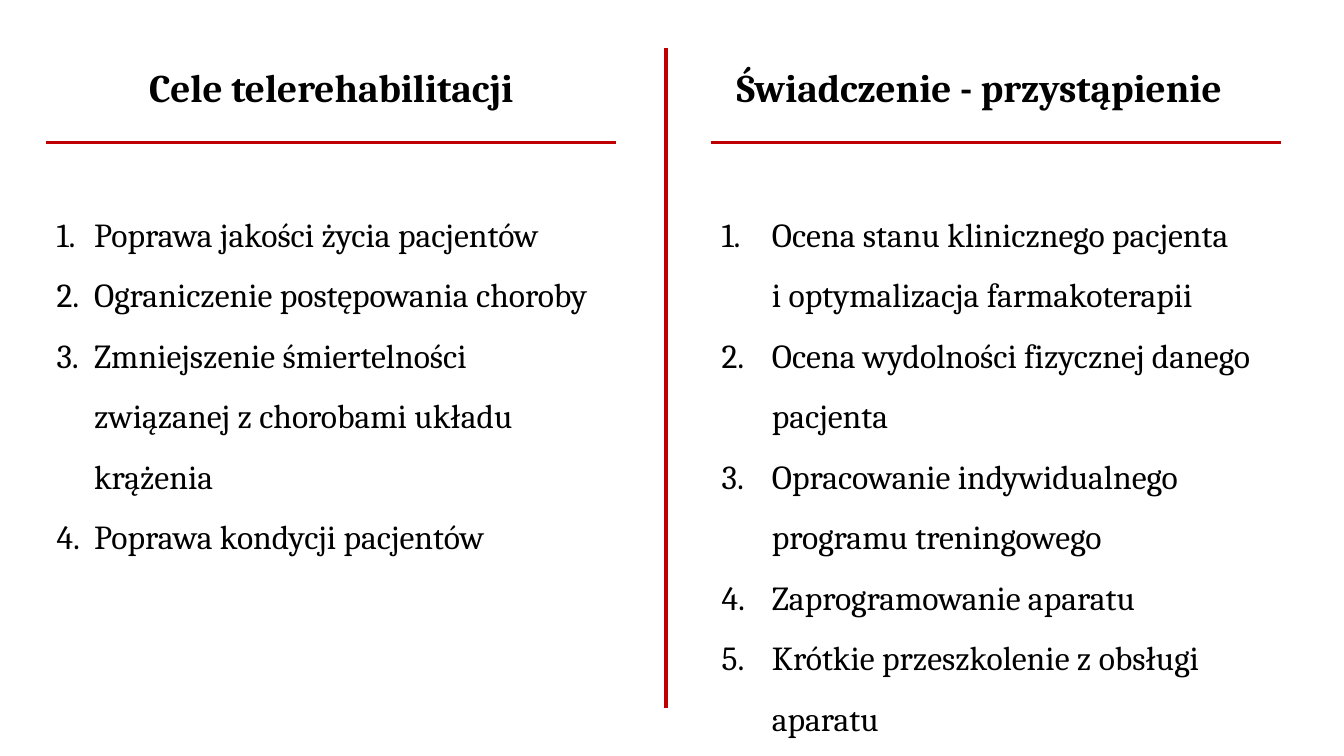
from lxml import etree
from pptx import Presentation
from pptx import util as u
from pptx.dml.color import RGBColor
from pptx.enum import shapes, text
from pptx.oxml.ns import qn

COLORS = {"text": "000000", "rule": "C00000"}
FONT = "Cambria"
COMPARISON_LAYOUT = 4
COLUMN_WIDTH = 14.35
RULE_TOP = 3.6

COLUMNS = [
    dict(
        left=1.17, heading="Cele telerehabilitacji", heading_left=1.17,
        heading_width=COLUMN_WIDTH, align=text.PP_ALIGN.CENTER,
        list_size=(COLUMN_WIDTH, 11.79), indent=0.95,
        items=[
            "Poprawa jakości życia pacjentów",
            "Ograniczenie postępowania choroby",
            "Zmniejszenie śmiertelności związanej z chorobami układu krążenia",
            "Poprawa kondycji pacjentów",
        ],
    ),
    dict(
        left=17.93, heading="Świadczenie - przystąpienie", heading_left=18.31,
        heading_width=13.97, align=text.PP_ALIGN.LEFT,
        list_size=(15.27, 14.88), indent=1.27,
        items=[
            "Ocena stanu klinicznego pacjenta \ni optymalizacja farmakoterapii",
            "Ocena wydolności fizycznej danego pacjenta",
            "Opracowanie indywidualnego programu treningowego",
            "Zaprogramowanie aparatu",
            "Krótkie przeszkolenie z obsługi aparatu",
        ],
    ),
]


def write(para, words, size, bold=False, align=text.PP_ALIGN.LEFT, spacing=1.0):
    para.text = words
    para.alignment = align
    para.line_spacing = spacing
    para.space_before = para.space_after = u.Pt(0)
    for span in para.runs:
        span.font.name = FONT
        span.font.size = u.Pt(size)
        span.font.bold = bold
        span.font.color.rgb = RGBColor.from_string(COLORS["text"])


def number(para, indent):
    """Turn a paragraph into a numbered item with a hanging indent in cm."""
    props = para._p.get_or_add_pPr()
    props.set("marL", str(u.Cm(indent)))
    props.set("indent", str(-u.Cm(indent)))
    etree.SubElement(props, qn("a:buFont"), typeface="+mj-lt")
    etree.SubElement(props, qn("a:buAutoNum"), type="arabicPeriod")


class ComparisonSlide:
    def __init__(self, deck):
        self.page = deck.slides.add_slide(deck.slide_layouts[COMPARISON_LAYOUT])
        title = self.page.shapes.title._element
        title.getparent().remove(title)

    def place(self, index, left, top, width, height):
        """Move a placeholder and return its text frame."""
        box = self.page.placeholders[index]
        box.left, box.top = u.Cm(left), u.Cm(top)
        box.width, box.height = u.Cm(width), u.Cm(height)
        frame = box.text_frame
        frame.word_wrap = True
        frame.auto_size = text.MSO_AUTO_SIZE.NONE
        frame.vertical_anchor = text.MSO_ANCHOR.TOP
        return frame

    def heading(self, index, words, left, width, align):
        frame = self.place(index, left, 1.47, width, 1.45)
        write(frame.paragraphs[0], words, size=28, bold=True, align=align)

    def numbered_list(self, index, items, left, size, indent):
        frame = self.place(index, left, 4.75, *size)
        for position, item in enumerate(items):
            para = frame.add_paragraph() if position else frame.paragraphs[0]
            write(para, item, size=24, spacing=1.5)
            number(para, indent)

    def rule(self, start, end, weight):
        points = [u.Cm(value) for value in (*start, *end)]
        line = self.page.shapes.add_connector(shapes.MSO_CONNECTOR.STRAIGHT, *points)
        line.line.color.rgb = RGBColor.from_string(COLORS["rule"])
        line.line.width = u.Pt(weight)
        etree.SubElement(line._element.spPr, qn("a:effectLst"))


def main():
    deck = Presentation()
    deck.slide_width, deck.slide_height = u.Cm(33.87), u.Cm(19.05)
    slide = ComparisonSlide(deck)
    slide.rule((16.79, 1.22), (16.79, 17.83), weight=3)
    for order, column in enumerate(COLUMNS):
        left = column["left"]
        heading_index = 1 + 2 * order
        slide.heading(heading_index, column["heading"], column["heading_left"],
                      column["heading_width"], column["align"])
        slide.rule((left, RULE_TOP), (left + COLUMN_WIDTH, RULE_TOP), weight=2.25)
        slide.numbered_list(heading_index + 1, column["items"], left,
                            column["list_size"], column["indent"])
    deck.save("out.pptx")


if __name__ == "__main__":
    main()
